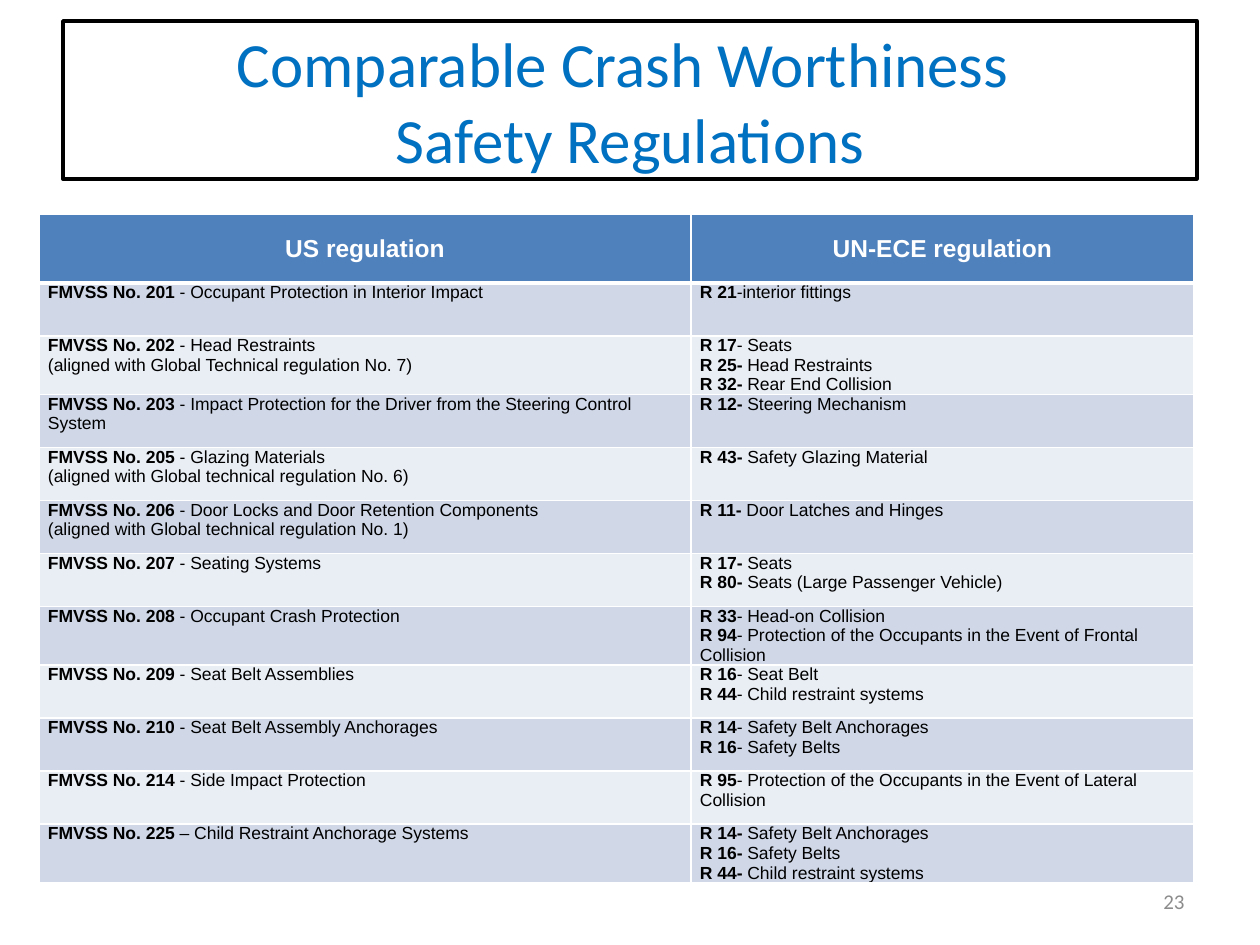
from lxml import etree
from pptx import Presentation
from pptx.dml.color import RGBColor
from pptx.enum.shapes import MSO_SHAPE
from pptx.enum.text import MSO_ANCHOR, PP_ALIGN
from pptx.oxml.ns import qn
from pptx.util import Emu, Pt

RECT = MSO_SHAPE.RECTANGLE
TOP, MIDDLE = MSO_ANCHOR.TOP, MSO_ANCHOR.MIDDLE
LEFT, CENTER, RIGHT = PP_ALIGN.LEFT, PP_ALIGN.CENTER, PP_ALIGN.RIGHT
SCALE = 914400 / 126

# Text before "|" is bold
HEADS = ["US regulation|", "UN-ECE regulation|"]
RULES = [
    (["FMVSS No. 201| - Occupant Protection in Interior Impact"],
     ["R 21|-interior fittings"]),
    (["FMVSS No. 202| - Head Restraints",
      "(aligned with Global Technical regulation No. 7)"],
     ["R 17|- Seats", "R 25-| Head Restraints", "R 32-| Rear End Collision"]),
    (["FMVSS No. 203| - Impact Protection for the Driver from the Steering Control System"],
     ["R 12-| Steering Mechanism"]),
    (["FMVSS No. 205| - Glazing Materials",
      "(aligned with Global technical regulation No. 6)"],
     ["R 43-| Safety Glazing Material"]),
    (["FMVSS No. 206| - Door Locks and Door Retention Components",
      "(aligned with Global technical regulation No. 1)"],
     ["R 11-| Door Latches and Hinges"]),
    (["FMVSS No. 207| - Seating Systems"],
     ["R 17-| Seats", "R 80-| Seats (Large Passenger Vehicle)"]),
    (["FMVSS No. 208| - Occupant Crash Protection"],
     ["R 33|- Head-on Collision",
      "R 94|- Protection of the Occupants in the Event of Frontal Collision"]),
    (["FMVSS No. 209| - Seat Belt Assemblies"],
     ["R 16|- Seat Belt", "R 44|- Child restraint systems"]),
    (["FMVSS No. 210| - Seat Belt Assembly Anchorages"],
     ["R 14|- Safety Belt Anchorages", "R 16|- Safety Belts"]),
    (["FMVSS No. 214| - Side Impact Protection"],
     ["R 95|- Protection of the Occupants in the Event of Lateral Collision"]),
    (["FMVSS No. 225| – Child Restraint Anchorage Systems"],
     ["R 14-| Safety Belt Anchorages", "R 16-| Safety Belts",
      "R 44-| Child restraint systems"]),
]


def px(n):
    return Emu(round(n * SCALE))


def color(code):
    return RGBColor.from_string(code)


class Deck:
    blue, ink, white, gray = "0070C0", "000000", "FFFFFF", "8C8C8C"
    head, bands = "4F81BD", ("D0D8E8", "E9EDF4")

    def __init__(self, wide, high):
        self.file = Presentation()
        self.file.slide_width, self.file.slide_height = px(wide), px(high)
        self.slide = self.file.slides.add_slide(self.file.slide_layouts[6])

    def words(self, frame, lines, size, face, tint, align):
        frame.word_wrap = True
        for i, line in enumerate(lines):
            para = frame.add_paragraph() if i else frame.paragraphs[0]
            para.alignment = align
            font = para.font
            font.size, font.name = Pt(size), face
            font.color.rgb = color(tint)
            bold, mark, rest = line.partition("|")
            if not mark:
                para.text = line
                continue
            for text, heavy in ((bold, True), (rest, False)):
                if text:
                    run = para.add_run()
                    run.text, run.font.bold = text, heavy

    def title(self, box, text):
        shape = self.slide.shapes.add_shape(RECT, *map(px, box))
        shape.shadow.inherit = False
        shape.fill.solid()
        shape.fill.fore_color.rgb = color(self.white)
        shape.line.color.rgb = color(self.ink)
        shape.line.width = Pt(2)
        shape.text_frame.vertical_anchor = MIDDLE
        self.words(shape.text_frame, [text], 36, "Calibri", self.blue, CENTER)

    def label(self, box, text):
        frame = self.slide.shapes.add_textbox(*map(px, box)).text_frame
        frame.vertical_anchor = MIDDLE
        self.words(frame, [text], 12, "Calibri", self.gray, RIGHT)

    def edge(self, cell, side, width):
        line = etree.SubElement(cell._tc.get_or_add_tcPr(), qn("a:" + side),
                                w=str(Pt(width)))
        fill = etree.SubElement(line, qn("a:solidFill"))
        etree.SubElement(fill, qn("a:srgbClr"), val=self.white)

    def cell(self, cell, lines, row):
        cell.margin_left = cell.margin_right = px(9)
        cell.margin_top = cell.margin_bottom = 0
        cell.vertical_anchor = TOP if row else MIDDLE
        thick = {(0, "lnB"), (1, "lnT")}
        for side in ("lnL", "lnR", "lnT", "lnB"):
            self.edge(cell, side, 3 if (row, side) in thick else 1)
        cell.fill.solid()
        back = self.bands[(row - 1) % 2] if row else self.head
        cell.fill.fore_color.rgb = color(back)
        look = (10, "Arial", self.ink, LEFT) if row else (14, "Arial", self.white, CENTER)
        self.words(cell.text_frame, lines, *look)

    def table(self, left, top, cols, first, step, rows):
        high = first + step * (len(rows) - 1)
        box = map(px, (left, top, sum(cols), high))
        grid = self.slide.shapes.add_table(len(rows), len(cols), *box).table
        for col, wide in zip(grid.columns, cols):
            col.width = px(wide)
        for r, cells in enumerate(rows):
            grid.rows[r].height = px(step if r else first)
            for c, lines in enumerate(cells):
                self.cell(grid.cell(r, c), lines, r)


def main():
    deck = Deck(1260, 945)
    # Heading
    deck.title((63, 21, 1134, 158), "Comparable Crash Worthiness \vSafety Regulations")
    # Regulations side by side
    deck.table(39, 214, (652, 503), 69, 53, [[[head] for head in HEADS], *RULES])
    # Page number
    deck.label((903, 876, 294, 50), "23")
    deck.file.save("out.pptx")


if __name__ == "__main__":
    main()
